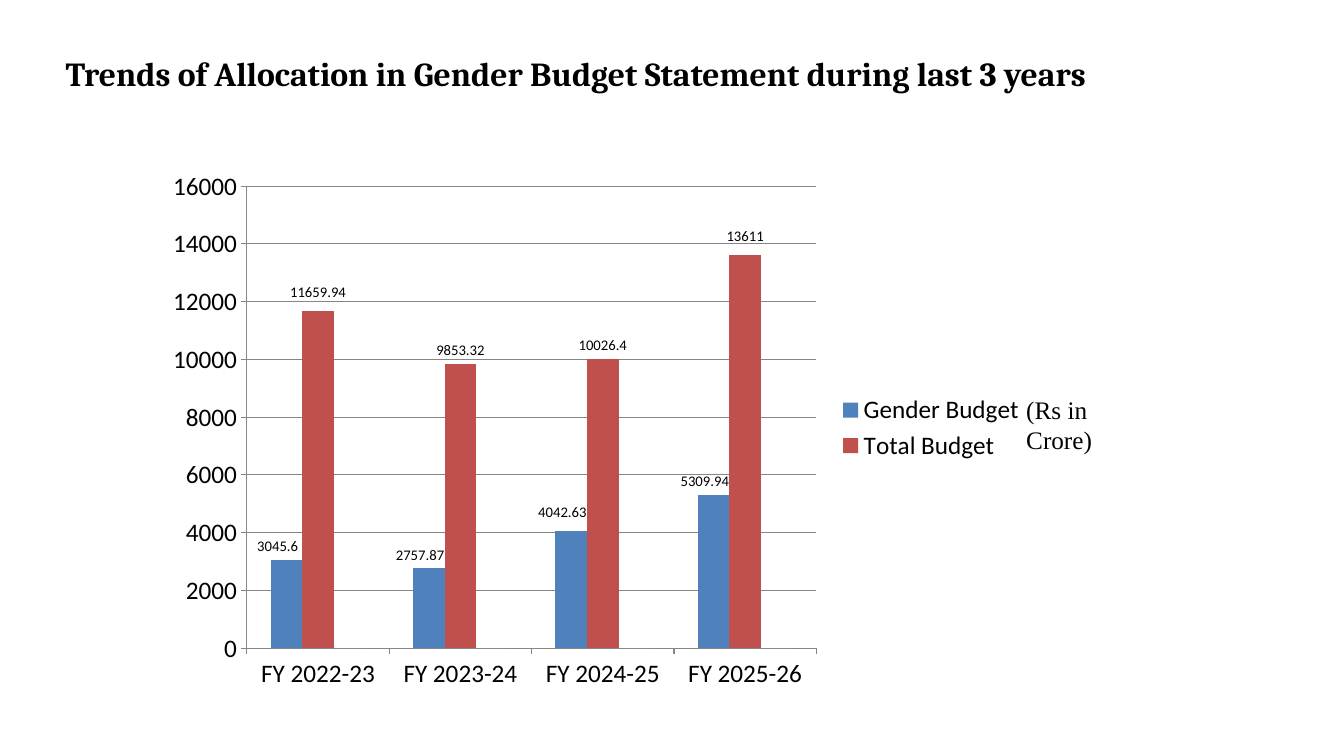
import pptx
import pptx.chart.data
import pptx.dml.color
import pptx.enum.chart
import pptx.enum.text
import pptx.oxml
import pptx.oxml.ns
import pptx.util
from pptx.util import Inches, Pt

YEARS = ["FY 2022-23", "FY 2023-24", "FY 2024-25", "FY 2025-26"]
# name, values, colour, label shifts (fractions of the chart's width and height)
BUDGETS = [
    ("Gender Budget", [3045.6, 2757.87, 4042.63, 5309.94], "4F81BD",
     [(-0.01, 0), (-0.01, 0), (-0.01, -0.01), (-0.01, 0)]),
    ("Total Budget", [11659.94, 9853.32, 10026.4, 13611], "C0504D",
     [(0, -0.01), (0, 0), (0, 0), (0, -0.01)]),
    ("Series 3", [0, 0, 0, 0], "9BBB59", []),
]
PLOT_AREA = {"x": 0.1, "y": 0.05, "w": 0.65, "h": 0.86}


def rgb(color):
    return pptx.dml.color.RGBColor.from_string(color)


def layout_xml(modes, sizes):
    """Return a manual chart layout element."""
    parts = "".join(f'<c:{tag} val="{val}"/>' for tag, val in [*modes.items(), *sizes.items()])
    return pptx.oxml.parse_xml(
        f'<c:layout {pptx.oxml.ns.nsdecls("c")}><c:manualLayout>{parts}</c:manualLayout></c:layout>')


class BudgetSlide:
    text_color = "000000"
    line_color = "868686"
    chart_font = "Calibri"
    size = 18
    label_size = 10.5

    def __init__(self, prs):
        self.slide = prs.slides.add_slide(prs.slide_layouts[6])

    def style(self, font, name, size, bold=False):
        font.name, font.size, font.bold = name, Pt(size), bold
        font.color.rgb = rgb(self.text_color)

    def text(self, box, words, font, size, bold=False, margins=None):
        sp = self.slide.shapes.add_textbox(*map(Inches, box))
        tf = sp.text_frame
        tf.word_wrap = True
        if margins:
            tf.margin_left, tf.margin_top, tf.margin_right, tf.margin_bottom = map(Inches, margins)
        p = tf.paragraphs[0]
        p.text = words
        self.style(p.font, font, size, bold)
        return p

    def column_chart(self, box, categories, series):
        data = pptx.chart.data.CategoryChartData()
        data.categories = categories
        for name, values, _, _ in series:
            data.add_series(name, values)
        chart = self.slide.shapes.add_chart(
            pptx.enum.chart.XL_CHART_TYPE.COLUMN_CLUSTERED, *map(Inches, box), data).chart
        chart.has_title = False
        self.style(chart.font, self.chart_font, self.size)
        plot = chart.plots[0]
        plot.gap_width, plot.overlap, plot.vary_by_categories = 150, 0, False
        for ser, (_, _, color, shifts) in zip(plot.series, series):
            ser.format.fill.solid()
            ser.format.fill.fore_color.rgb = rgb(color)
            for i, _ in enumerate(shifts):
                label = ser.points[i].data_label
                self.style(label.font, self.chart_font, self.label_size)
                label.position = pptx.enum.chart.XL_LABEL_POSITION.OUTSIDE_END
        self.axes(chart)
        self.legend(chart, hidden=2)
        self.place(chart, [shift for row in series for shift in row[3]])

    def axes(self, chart):
        value = chart.value_axis
        value.minimum_scale, value.maximum_scale, value.major_unit = 0, 16000, 2000
        value.has_major_gridlines = True
        for line in (value.format.line, value.major_gridlines.format.line,
                     chart.category_axis.format.line):
            line.color.rgb = rgb(self.line_color)
            line.width = Pt(0.75)
        for axis in (value, chart.category_axis):
            axis.major_tick_mark = pptx.enum.chart.XL_TICK_MARK.OUTSIDE

    def legend(self, chart, hidden):
        """Show the legend at the right, without the entry of one series."""
        chart.has_legend = True
        chart.legend.position = pptx.enum.chart.XL_LEGEND_POSITION.RIGHT
        chart.legend.include_in_layout = False
        position = chart.element.xpath(".//c:legend/c:legendPos")[0]
        position.addnext(pptx.oxml.parse_xml(
            f'<c:legendEntry {pptx.oxml.ns.nsdecls("c")}><c:idx val="{hidden}"/>'
            '<c:delete val="1"/></c:legendEntry>'))

    def place(self, chart, shifts):
        """Fix the plot area and move the data labels by their shifts."""
        area = chart.element.xpath(".//c:plotArea")[0]
        for old in area.xpath("./c:layout"):
            area.remove(old)
        area.insert(0, layout_xml(
            {"layoutTarget": "inner", "xMode": "edge", "yMode": "edge"}, PLOT_AREA))
        for idx, (x, y) in zip(chart.element.xpath(".//c:dLbl/c:idx"), shifts):
            if x or y:
                idx.addnext(layout_xml({}, {"x": x, "y": y}))


def main():
    prs = pptx.Presentation()
    prs.slide_width, prs.slide_height = Inches(13.33), Inches(7.5)
    s = BudgetSlide(prs)
    title = s.text((0.65, 0.37, 11.61, 0.53),
                   "Trends of Allocation in Gender Budget Statement during last 3 years",
                   "Cambria", 24, bold=True, margins=(0, 0.07, 0, 0))
    title.line_spacing, title.space_before = Pt(34.6), Pt(5.3)
    s.column_chart((1.58, 1.58, 8.69, 5.33), YEARS, BUDGETS)
    s.text((10.08, 3.86, 1.42, 0.4), "(Rs in Crore)", "Times New Roman", 18)
    prs.save("out.pptx")


if __name__ == "__main__":
    main()
